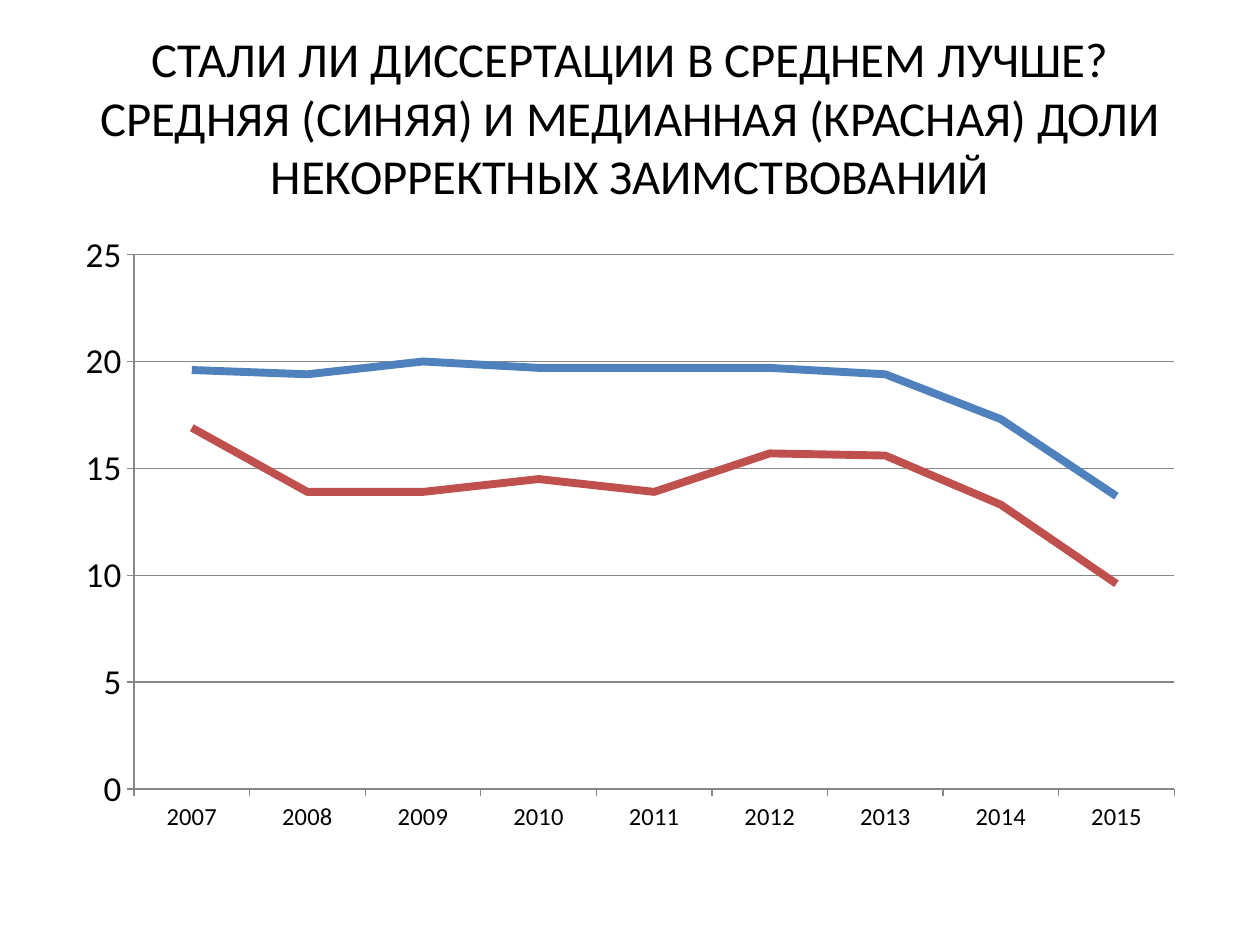
from pptx import Presentation
from pptx.chart.data import CategoryChartData
from pptx.dml.color import RGBColor
from pptx.enum.chart import XL_CHART_TYPE, XL_MARKER_STYLE, XL_TICK_MARK
from pptx.enum.text import MSO_ANCHOR, MSO_AUTO_SIZE, PP_ALIGN
from pptx.util import Pt


def paint(color, code):
    color.rgb = RGBColor.from_string(code)


deck = Presentation()
deck.slide_width, deck.slide_height = Pt(720), Pt(540)
slide = deck.slides.add_slide(deck.slide_layouts[5])

# Title
title = slide.shapes.title
title.left, title.top, title.width, title.height = Pt(36), Pt(21.6), Pt(648), Pt(90)
frame = title.text_frame
frame.text = ("СТАЛИ ЛИ ДИССЕРТАЦИИ В СРЕДНЕМ ЛУЧШЕ? СРЕДНЯЯ (СИНЯЯ) "
              "И МЕДИАННАЯ (КРАСНАЯ) ДОЛИ НЕКОРРЕКТНЫХ ЗАИМСТВОВАНИЙ")
frame.word_wrap = True
frame.auto_size = MSO_AUTO_SIZE.NONE
frame.vertical_anchor = MSO_ANCHOR.MIDDLE
line = frame.paragraphs[0]
line.alignment = PP_ALIGN.CENTER
font = line.runs[0].font
font.name, font.size = "Calibri", Pt(27.9)
paint(font.color, "000000")

# Chart data
data = CategoryChartData()
data.categories = [str(year) for year in range(2007, 2016)]
data.add_series("Series 1", [19.6, 19.4, 20, 19.7, 19.7, 19.7, 19.4, 17.3, 13.7])
data.add_series("Series 2", [16.9, 13.9, 13.9, 14.5, 13.9, 15.7, 15.6, 13.3, 9.6])

# Line chart
chart = slide.shapes.add_chart(XL_CHART_TYPE.LINE, Pt(36), Pt(126), Pt(648),
                               Pt(356.4), data).chart
chart.has_legend = False
chart.has_title = False
chart.font.name, chart.font.size = "Calibri", Pt(10)
paint(chart.font.color, "000000")
plot = chart.plots[0]
plot.vary_by_categories = False
for series, code in zip(plot.series, ["4F81BD", "C0504D"]):
    series.smooth = False
    series.marker.style = XL_MARKER_STYLE.NONE
    series.format.line.width = Pt(4.5)
    paint(series.format.line.color, code)

# Axes
years, shares = chart.category_axis, chart.value_axis
shares.minimum_scale, shares.maximum_scale, shares.major_unit = 0, 25, 5
shares.has_major_gridlines = True
for axis, size in [(years, 14), (shares, 20)]:
    axis.major_tick_mark = XL_TICK_MARK.OUTSIDE
    axis.minor_tick_mark = XL_TICK_MARK.NONE
    axis.tick_labels.font.size = Pt(size)
for part in [years, shares, shares.major_gridlines]:
    part.format.line.width = Pt(0.75)
    paint(part.format.line.color, "878787")

deck.save("out.pptx")
